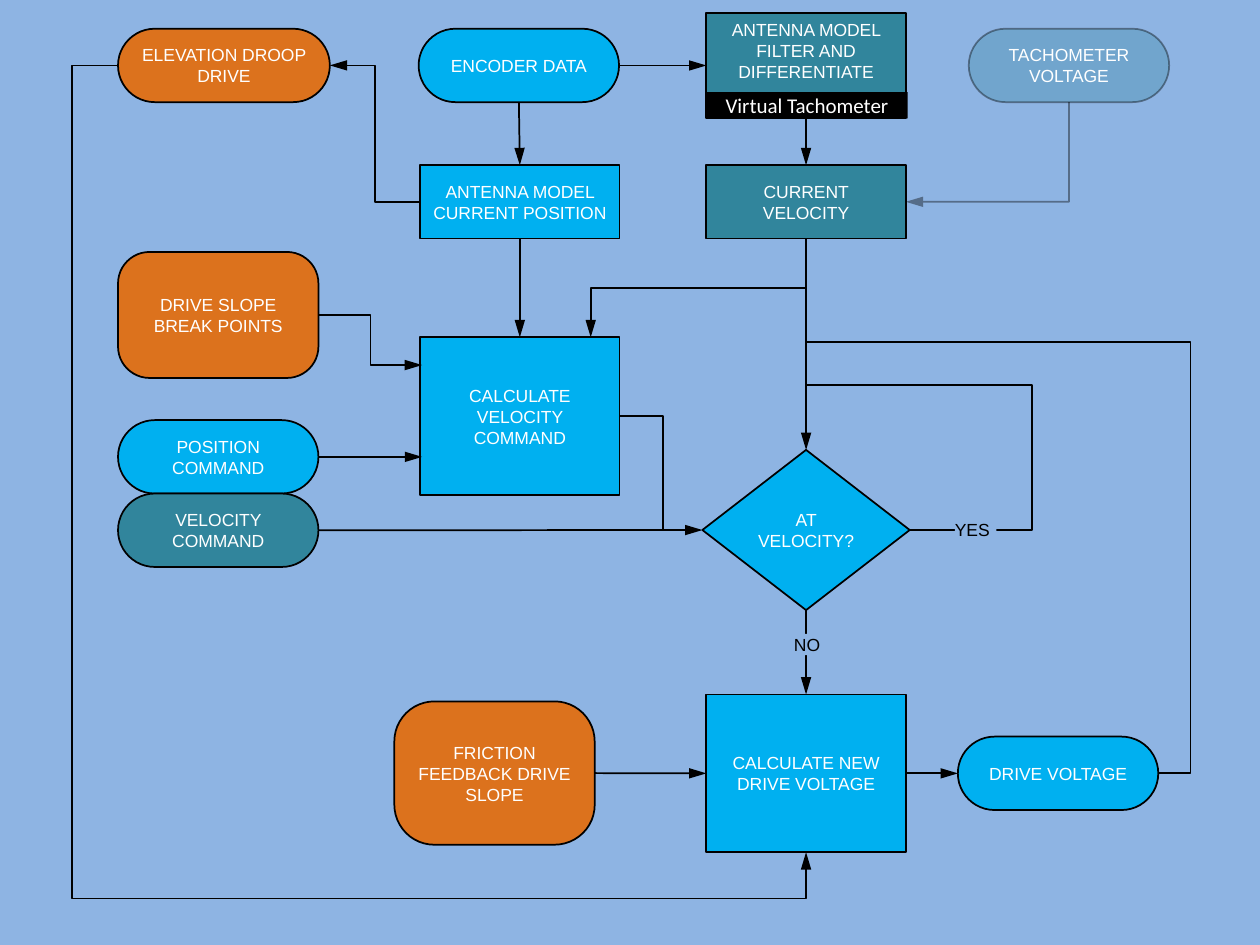
from lxml import etree
from pptx import Presentation
from pptx import util as u
from pptx.dml import color
from pptx.enum import shapes, text
from pptx.oxml import ns

COLORS = {
    "sky": "8EB4E3", "blue": "00B0F0", "teal": "31859C",
    "orange": "E46C0A", "black": "000000", "white": "FFFFFF",
}
TOP, LEFT, BOTTOM, RIGHT = range(4)
LINE_ALPHA = 40
BOX_WIDTH, PILL_WIDTH, LOW = 4.02, 4.04, 1.48
COLUMNS = {"input": 2.38, "position": 8.47, "velocity": 14.24}
RECT = shapes.MSO_SHAPE.RECTANGLE
ROUND = shapes.MSO_SHAPE.ROUNDED_RECTANGLE
DECISION = shapes.MSO_SHAPE.FLOWCHART_DECISION


def add_child(parent, tag, **attributes):
    return etree.SubElement(parent, ns.qn(tag), attributes)


def paint(fill, name, alpha=100):
    """Give a fill a solid colour, with its opacity in percent."""
    fill.solid()
    fill.fore_color.rgb = color.RGBColor.from_string(COLORS[name])
    if alpha < 100:
        for tint in fill._xPr.iter(ns.qn("a:srgbClr")):
            add_child(tint, "a:alpha", val=str(alpha * 1000))


def write(shape, words, size=10, font="Arial", tint="white",
          anchor=text.MSO_ANCHOR.MIDDLE, align=text.PP_ALIGN.CENTER, inset=None):
    frame = shape.text_frame
    frame.word_wrap = True
    frame.vertical_anchor = anchor
    if inset is not None:
        frame.margin_left = frame.margin_right = u.Cm(inset)
        frame.margin_top = frame.margin_bottom = u.Cm(inset)
    para = frame.paragraphs[0]
    para.alignment = align
    span = para.add_run()
    span.text = words
    span.font.size, span.font.name = u.Pt(size), font
    paint(span.font.fill, tint)


def add_box(page, words, place, fill, kind=RECT, corner=0.5, alpha=100,
            line_alpha=100, outlined=True, **text_format):
    box = page.shapes.add_shape(kind, *(u.Cm(value) for value in place))
    box.shadow.inherit = False
    if kind == ROUND:
        box.adjustments[0] = corner
    paint(box.fill, fill, alpha)
    if outlined:
        box.line.width = u.Pt(1)
        paint(box.line.fill, "black", line_alpha)
    else:
        box.line.fill.background()
    write(box, words, **text_format)
    return box


def side_point(box, side):
    x = {LEFT: box.left, RIGHT: box.left + box.width}
    y = {TOP: box.top, BOTTOM: box.top + box.height}
    return (x.get(side, box.left + box.width // 2),
            y.get(side, box.top + box.height // 2))


def style_line(connector, arrow, alpha=100):
    connector.line.width = u.Pt(1)
    paint(connector.line.fill, "black", alpha)
    if arrow:
        add_child(connector.line._ln, arrow, type="triangle", w="med", len="lg")
    add_child(connector._element.spPr, "a:effectLst")


def add_arrow(page, source, source_side, target, target_side=None):
    """Straight arrow from a box side to another side or to a point."""
    start = side_point(source, source_side)
    end = target if target_side is None else side_point(target, target_side)
    arrow = page.shapes.add_connector(shapes.MSO_CONNECTOR.STRAIGHT, *start, *end)
    arrow.begin_connect(source, source_side)
    if target_side is not None:
        arrow.end_connect(target, target_side)
    style_line(arrow, "a:tailEnd")


def add_elbow(page, start, end, bends=(), arrow="a:tailEnd", alpha=100):
    """Bent line leaving sideways; bends holds the x, then the y, of its turns."""
    elbow = page.shapes.add_connector(shapes.MSO_CONNECTOR.ELBOW, *start, *end)
    geometry = elbow._element.spPr.find(ns.qn("a:prstGeom"))
    geometry.set("prst", f"bentConnector{2 + len(bends)}")
    guides = geometry.find(ns.qn("a:avLst"))
    if guides is None:
        guides = add_child(geometry, "a:avLst")
    for number, (bend, low, high) in enumerate(zip(bends, start, end), 1):
        share = round((u.Cm(bend) - low) / (high - low) * 100000)
        add_child(guides, "a:gd", name=f"adj{number}", fmla=f"val {share}")
    style_line(elbow, arrow, alpha)


def add_boxes(page):
    inputs, position, velocity = COLUMNS.values()

    def pill(words, x, y, fill="blue", width=PILL_WIDTH, height=LOW, **options):
        return add_box(page, words, (x, y, width, height), fill, ROUND, **options)

    def step(words, x, y, height, fill="blue", **options):
        return add_box(page, words, (x, y, BOX_WIDTH, height), fill, **options)

    return {
        "encoder": pill("ENCODER DATA", 8.44, 0.58),
        "filter": step("ANTENNA MODEL FILTER AND DIFFERENTIATE", velocity, 0.26, 2.12,
                       "teal", anchor=text.MSO_ANCHOR.TOP),
        "velocity": step("CURRENT VELOCITY", velocity, 3.33, LOW, "teal"),
        "position": step("ANTENNA MODEL CURRENT POSITION", position, 3.33, LOW),
        "command": step("CALCULATE VELOCITY COMMAND", position, 6.8, 3.18),
        "new voltage": step("CALCULATE NEW DRIVE VOLTAGE", velocity, 14, 3.18),
        "droop": pill("ELEVATION DROOP DRIVE", inputs, 0.58, "orange", 4.27, alpha=91),
        "tachometer": pill("TACHOMETER VOLTAGE", 19.53, 0.58, "teal",
                           alpha=30, line_alpha=LINE_ALPHA),
        "position input": pill("POSITION COMMAND", inputs, 8.47),
        "velocity input": pill("VELOCITY COMMAND", inputs, 9.95, "teal"),
        "voltage": pill("DRIVE VOLTAGE", 19.31, 14.85),
        "slope": pill("DRIVE SLOPE BREAK POINTS", inputs, 5.08, "orange",
                      height=2.54, corner=0.25, alpha=91),
        "friction": pill("FRICTION FEEDBACK DRIVE SLOPE", 7.95, 14.14, "orange",
                         height=2.89, corner=0.28, alpha=91),
        "decision": add_box(page, "AT VELOCITY?", (14.16, 9.07, 4.18, 3.23), "blue",
                            DECISION, inset=0),
    }


def connect_boxes(page, boxes):
    for source, source_side, target, target_side in [
        ("encoder", RIGHT, "filter", LEFT),
        ("encoder", BOTTOM, "position", TOP),
        ("position", BOTTOM, "command", TOP),
        ("filter", BOTTOM, "velocity", TOP),
        ("velocity", BOTTOM, "decision", TOP),
        ("velocity input", RIGHT, "decision", LEFT),
        ("decision", BOTTOM, "new voltage", TOP),
        ("friction", RIGHT, "new voltage", LEFT),
        ("new voltage", RIGHT, "voltage", LEFT),
    ]:
        add_arrow(page, boxes[source], source_side, boxes[target], target_side)

    def at(name, side):
        return side_point(boxes[name], side)

    trunk = at("velocity", BOTTOM)[0]
    entry = u.Cm(8.51)
    add_arrow(page, boxes["position input"], RIGHT,
              (entry, at("position input", RIGHT)[1]))
    add_elbow(page, at("slope", RIGHT), (entry, u.Cm(7.36)), [7.47])
    add_elbow(page, at("velocity", RIGHT), at("tachometer", BOTTOM),
              arrow="a:headEnd", alpha=LINE_ALPHA)
    add_elbow(page, (trunk, u.Cm(5.81)), (u.Cm(11.91), boxes["command"].top))
    add_elbow(page, at("position", LEFT), at("droop", RIGHT), [7.56])
    add_elbow(page, at("droop", LEFT), at("new voltage", BOTTOM), [1.45, 18.12])
    add_elbow(page, at("command", RIGHT), (u.Cm(13.36), at("decision", LEFT)[1]),
              arrow=None)
    add_elbow(page, at("decision", RIGHT), (trunk, u.Cm(7.77)), [20.8, 7.76], arrow=None)
    add_elbow(page, at("voltage", RIGHT), (trunk, u.Cm(7.29)), [24, 6.89], arrow=None)


def add_labels(page):
    for words, x, y, align in [("YES", 19.25, 10.47, text.PP_ALIGN.LEFT),
                               ("NO", 15.85, 12.78, text.PP_ALIGN.CENTER)]:
        add_box(page, words, (x, y, 0.84, 0.43), "sky", outlined=False, tint="black",
                align=align, inset=0, anchor=text.MSO_ANCHOR.TOP)
    add_box(page, "Virtual Tachometer", (COLUMNS["velocity"], 1.86, 4.06, 0.53), "black",
            outlined=False, size=12, font="Calibri")


def main():
    deck = Presentation()
    deck.slide_width, deck.slide_height = u.Cm(25.4), u.Cm(19.05)
    page = deck.slides.add_slide(deck.slide_layouts[6])
    paint(page.background.fill, "sky")
    connect_boxes(page, add_boxes(page))
    add_labels(page)
    deck.save("out.pptx")


if __name__ == "__main__":
    main()
